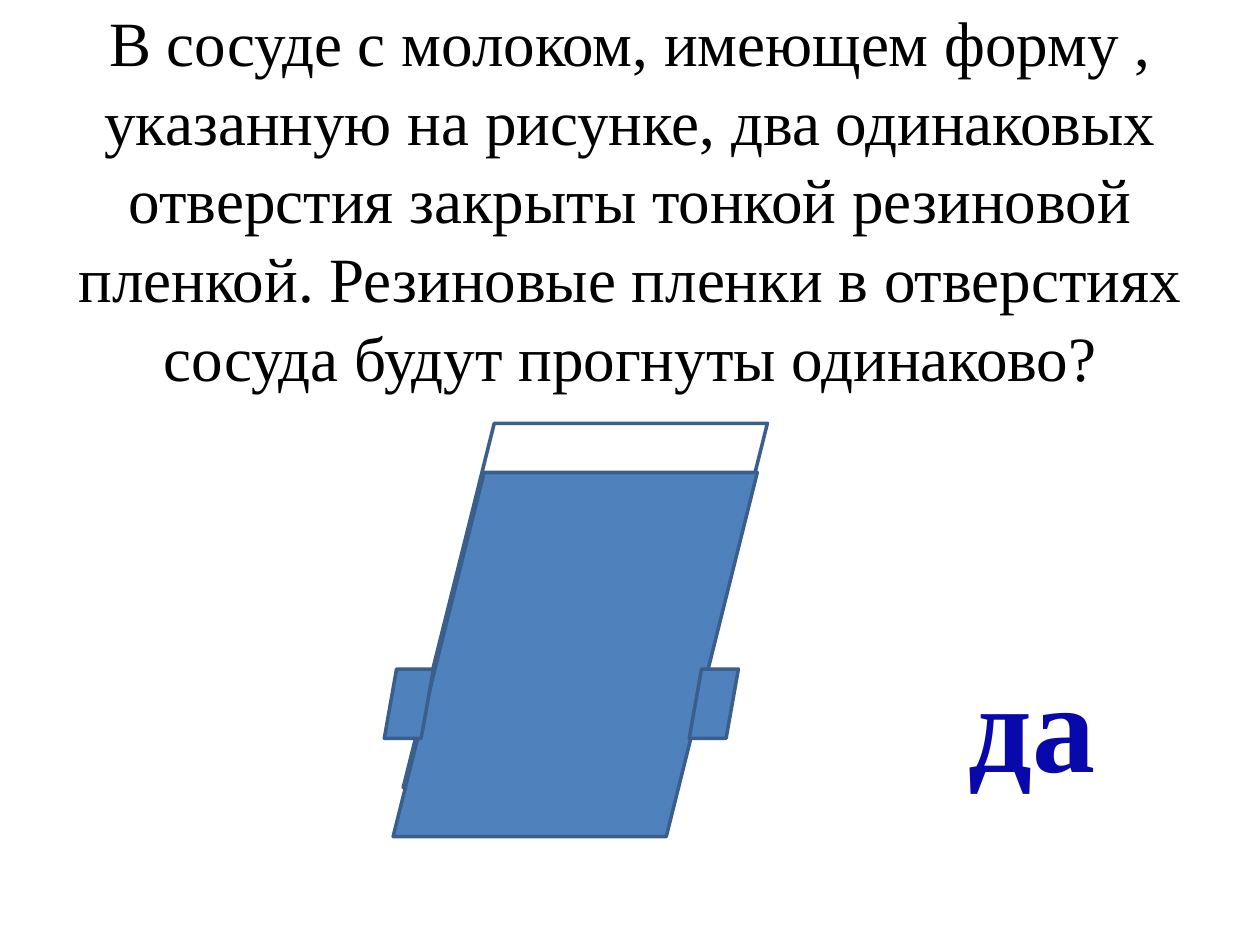
from pptx import Presentation
from pptx import util as u
from pptx.dml import color
from pptx.enum import shapes, text

FONT = "Times New Roman"
WHITE = "FFFFFF"
MILK = "4F81BD"
OUTLINE = "3A5F8C"
QUESTION = (
    "В сосуде с молоком, имеющем форму , указанную на рисунке, "
    "два одинаковых отверстия закрыты тонкой резиновой пленкой. "
    "Резиновые пленки в отверстиях сосуда будут прогнуты одинаково?"
)


def rgb(value):
    return color.RGBColor.from_string(value)


def place(shape, left, top, width, height):
    shape.left, shape.top = u.Inches(left), u.Inches(top)
    shape.width, shape.height = u.Inches(width), u.Inches(height)


def write(shape, content, size, font_color, bold=False, wrap=True):
    frame = shape.text_frame
    frame.word_wrap = wrap
    frame.auto_size = text.MSO_AUTO_SIZE.NONE
    paragraph = frame.paragraphs[0]
    paragraph.alignment = text.PP_ALIGN.CENTER
    run = paragraph.add_run()
    run.text = content
    run.font.name = FONT
    run.font.size = u.Pt(size)
    run.font.bold = bold
    run.font.color.rgb = rgb(font_color)
    return paragraph


def add_question(slide):
    title = slide.shapes.title
    place(title, 0, 0, 10, 3.13)
    title.text_frame.vertical_anchor = text.MSO_ANCHOR.MIDDLE
    paragraph = write(title, QUESTION, 36, "000000")
    paragraph.line_spacing = 1.04


def add_parallelogram(group, left, top, width, height, fill):
    shape = group.shapes.add_shape(
        shapes.MSO_SHAPE.PARALLELOGRAM,
        u.Inches(left), u.Inches(top), u.Inches(width), u.Inches(height),
    )
    shape.shadow.inherit = False
    shape.fill.solid()
    shape.fill.fore_color.rgb = rgb(fill)
    shape.line.color.rgb = rgb(OUTLINE)
    shape.line.width = u.Pt(2)


def add_vessel(slide):
    group = slide.shapes.add_group_shape()
    for left, top, fill in ((3.2, 3.36, WHITE), (3.12, 3.75, MILK)):
        add_parallelogram(group, left, top, 2.89, 2.89, fill)
    for left in (5.47, 3.05):
        add_parallelogram(group, left, 5.31, 0.39, 0.55, MILK)


def add_answer(slide):
    answer = slide.shapes.add_textbox(
        u.Inches(7.58), u.Inches(5.08), u.Inches(1.22), u.Inches(1.31)
    )
    write(answer, "да", 72, "0909AB", bold=True, wrap=False)


def main():
    presentation = Presentation()
    presentation.slide_width = u.Inches(10)
    presentation.slide_height = u.Inches(7.5)
    slide = presentation.slides.add_slide(presentation.slide_layouts[5])
    add_vessel(slide)
    add_question(slide)
    add_answer(slide)
    presentation.save("out.pptx")


if __name__ == "__main__":
    main()
